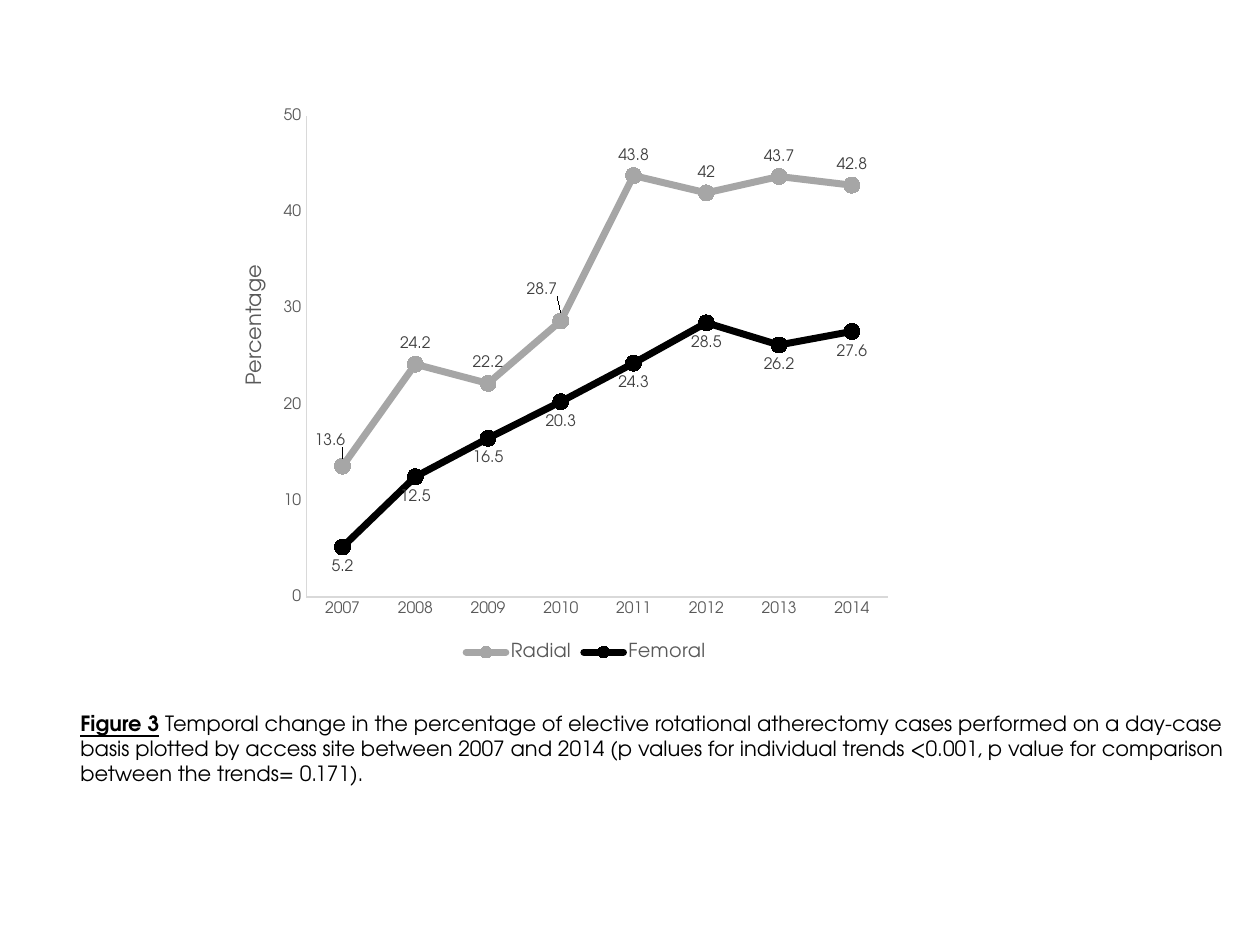
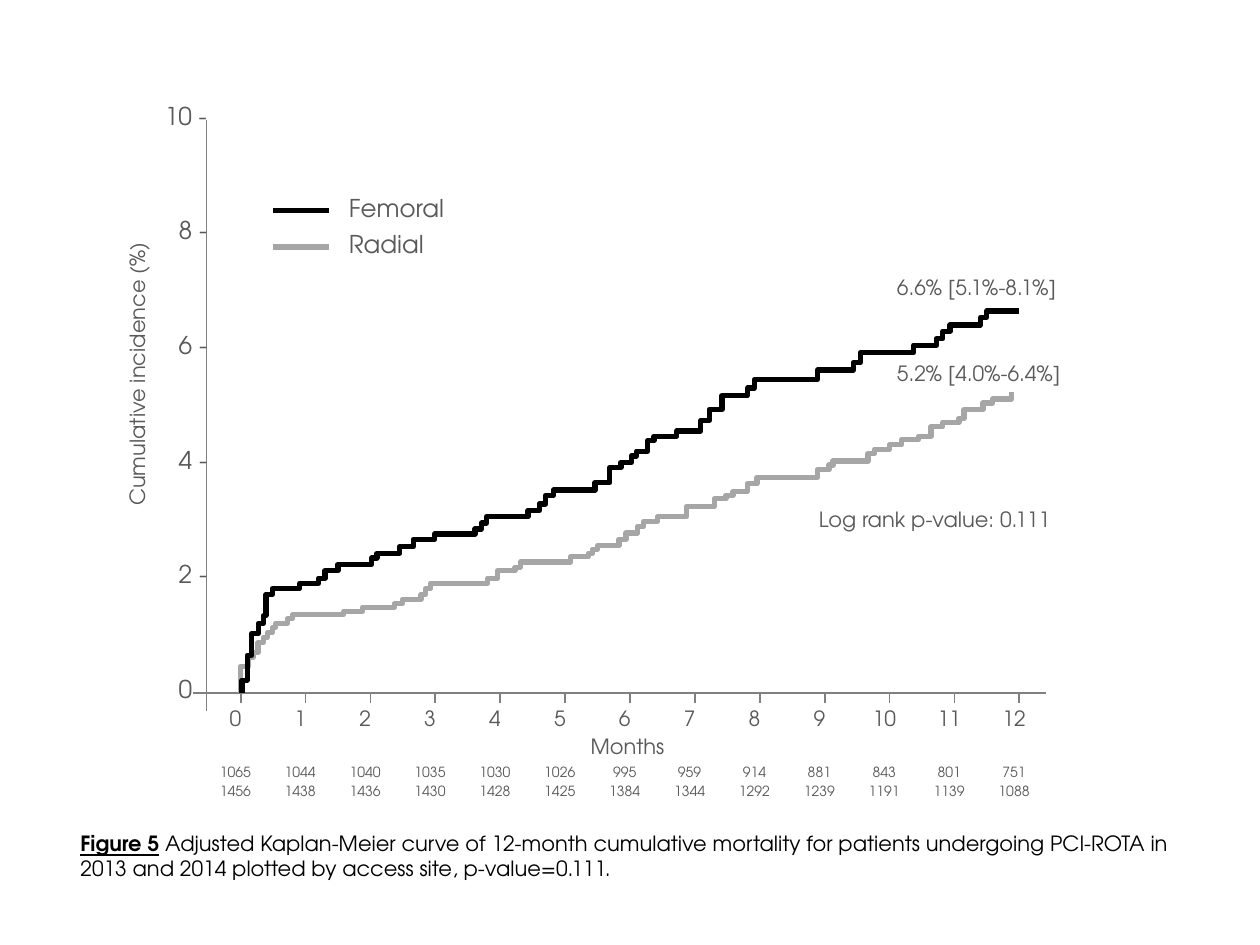
import pptx
import pptx.chart.data
import pptx.dml.color
import pptx.enum.chart
import pptx.enum.shapes
import pptx.enum.text
import pptx.oxml
import pptx.oxml.ns
import pptx.util

Inches = pptx.util.Inches
Pt = pptx.util.Pt
RGBColor = pptx.dml.color.RGBColor
ALIGN = pptx.enum.text.PP_ALIGN
LABEL = pptx.enum.chart.XL_LABEL_POSITION

FONT = "TeX Gyre Adventor"
BLACK = RGBColor(0x00, 0x00, 0x00)
LABEL_GRAY = RGBColor(0x40, 0x40, 0x40)
TEXT_GRAY = RGBColor(0x59, 0x59, 0x59)
AXIS_GRAY = RGBColor(0x80, 0x80, 0x80)
RADIAL_GRAY = RGBColor(0xA6, 0xA6, 0xA6)
CHART_AXIS_GRAY = RGBColor(0xD9, 0xD9, 0xD9)

# Figure 3: percentage of day cases by year
YEARS = [str(year) for year in range(2007, 2015)]
DAY_CASES = [
    ("Radial", RADIAL_GRAY, LABEL.ABOVE, (13.6, 24.2, 22.2, 28.7, 43.8, 42, 43.7, 42.8)),
    ("Femoral", BLACK, LABEL.BELOW, (5.2, 12.5, 16.5, 20.3, 24.3, 28.5, 26.2, 27.6)),
]
# point: shift of its label, as a share of the chart's width and height
MOVED_RADIAL_LABELS = {0: (-0.02, -0.01), 3: (-0.03, -0.02)}
CHART_WIDTH, CHART_HEIGHT = 5, 4.51
PLOT_LEFT, PLOT_TOP, PLOT_WIDTH, PLOT_HEIGHT = 0.28, 0.14, 4.62, 3.82

CAPTION_3 = ("Figure 3", "Temporal change in the percentage of elective rotational atherectomy cases "
             "performed on a day-case basis plotted by access site between 2007 and 2014 (p values for "
             "individual trends <0.001, p value for comparison between the trends= 0.171).")
CAPTION_5 = ("Figure 5", "Adjusted Kaplan-Meier curve of 12-month cumulative mortality for patients "
             "undergoing PCI-ROTA in 2013 and 2014 plotted by access site, p-value=0.111.")

# Figure 5: scales, in inches
LAST_MONTH = 12
ZERO_X, LAST_X = 1.91, 8.09
ZERO_Y = 5.5
PERCENT_HEIGHT = 0.46
MONTH_WIDTH = (LAST_X - ZERO_X) / LAST_MONTH
TICK_LENGTH = 0.08

# Figure 5: patients at risk at each month
FEMORAL_AT_RISK = (1065, 1044, 1040, 1035, 1030, 1026, 995, 959, 914, 881, 843, 801, 751)
RADIAL_AT_RISK = (1456, 1438, 1436, 1430, 1428, 1425, 1384, 1344, 1292, 1239, 1191, 1139, 1088)
# values, top, text size
MONTH_ROWS = [(range(LAST_MONTH + 1), 5.55, 12), (FEMORAL_AT_RISK, 6.01, 8), (RADIAL_AT_RISK, 6.16, 8)]

# Figure 5: steps of each curve as (month, cumulative incidence in %)
RADIAL_STEPS = [
    (0, 0.46), (0.12, 0.61), (0.19, 0.7), (0.27, 0.87), (0.35, 0.96), (0.41, 1.04), (0.49, 1.13),
    (0.54, 1.2), (0.72, 1.28), (0.8, 1.35), (1.59, 1.41), (1.88, 1.48), (2.37, 1.54), (2.49, 1.61),
    (2.78, 1.7), (2.85, 1.8), (2.93, 1.89), (3.81, 1.98), (3.96, 2.11), (4.23, 2.17), (4.31, 2.26),
    (5.09, 2.35), (5.36, 2.41), (5.42, 2.48), (5.5, 2.54), (5.83, 2.65), (5.94, 2.76), (6.12, 2.87),
    (6.21, 2.96), (6.43, 3.04), (6.87, 3.22), (7.3, 3.35), (7.48, 3.41), (7.59, 3.48), (7.81, 3.61),
    (7.96, 3.72), (8.89, 3.85), (9.07, 3.93), (9.13, 4), (9.67, 4.13), (9.77, 4.2), (10, 4.28),
    (10.19, 4.37), (10.45, 4.43), (10.64, 4.59), (10.82, 4.67), (11.07, 4.74), (11.15, 4.89),
    (11.44, 5), (11.59, 5.07), (11.88, 5.2),
]
FEMORAL_STEPS = [
    (0.02, 0.22), (0.1, 0.65), (0.17, 1.02), (0.27, 1.2), (0.35, 1.33), (0.39, 1.7), (0.49, 1.8),
    (0.91, 1.89), (1.2, 1.98), (1.3, 2.11), (1.5, 2.22), (2.02, 2.33), (2.1, 2.41), (2.45, 2.52),
    (2.66, 2.65), (2.99, 2.74), (3.61, 2.83), (3.71, 2.93), (3.79, 3.04), (4.43, 3.15), (4.6, 3.26),
    (4.7, 3.41), (4.82, 3.5), (5.46, 3.63), (5.69, 3.89), (5.86, 3.98), (6.02, 4.09), (6.1, 4.17),
    (6.27, 4.35), (6.37, 4.43), (6.72, 4.52), (7.09, 4.7), (7.22, 4.89), (7.42, 5.13), (7.81, 5.26),
    (7.92, 5.41), (8.89, 5.57), (9.44, 5.7), (9.55, 5.87), (10.37, 6), (10.72, 6.11), (10.82, 6.24),
    (10.93, 6.35), (11.4, 6.48), (11.5, 6.59),
]
# steps, month where the curve ends, colour
CURVES = [(RADIAL_STEPS, 11.88, RADIAL_GRAY), (FEMORAL_STEPS, 12, BLACK)]
NOTES = [("6.6% [5.1%-8.1%]", 7.02, 2.13, 1.99), ("5.2% [4.0%-6.4%]", 7.02, 2.81, 1.99),
         ("Log rank p-value: 0.111", 6.4, 3.97, 2.36)]
# name, colour, height of its line
KEY = [("Femoral", BLACK, 1.67), ("Radial", RADIAL_GRAY, 1.96)]


def month_x(month):
    return ZERO_X + month * MONTH_WIDTH


def incidence_y(percent):
    return ZERO_Y - percent * PERCENT_HEIGHT


def make_xml(prefix, tag, content=""):
    return pptx.oxml.parse_xml(
        f"<{prefix}:{tag} {pptx.oxml.ns.nsdecls(prefix)}>{content}</{prefix}:{tag}>")


def style_font(font, size, color):
    font.name = FONT
    font.size = Pt(size)
    font.color.rgb = color


def style_line(line, color, weight):
    line.color.rgb = color
    line.width = Pt(weight)


def add_text(page, text, left, top, width, height=0.3, size=12, align=ALIGN.LEFT, rotation=0):
    box = page.shapes.add_textbox(Inches(left), Inches(top), Inches(width), Inches(height))
    box.rotation = rotation
    box.text_frame.word_wrap = True
    box.text_frame.auto_size = pptx.enum.text.MSO_AUTO_SIZE.SHAPE_TO_FIT_TEXT
    para = box.text_frame.paragraphs[0]
    para.text = text
    para.alignment = align
    for span in para.runs:
        style_font(span.font, size, TEXT_GRAY)
    return para


def add_caption(page, caption, top, width, height):
    number, wording = caption
    para = add_text(page, number, 0.54, top, width, height)
    para.add_run().text = " "
    para.add_run().text = wording
    for span in para.runs:
        style_font(span.font, 12, BLACK)
    number_span = para.runs[0]
    number_span.font.bold = True
    number_span.font.underline = True


def add_line(page, x1, y1, x2, y2, color=AXIS_GRAY, weight=1):
    line = page.shapes.add_connector(pptx.enum.shapes.MSO_CONNECTOR.STRAIGHT,
                                     Inches(x1), Inches(y1), Inches(x2), Inches(y2))
    style_line(line.line, color, weight)
    line.element.spPr.append(make_xml("a", "effectLst"))


def add_month_row(page, values, top, size):
    """Write one line of text with a centred tab stop under each month."""
    left, inset, nudge = 1.4, 0.1, -0.04
    text = "".join(f"\t{value}" for value in values)
    para = add_text(page, text, left, top, 7.2, size=size)
    stops = "".join(
        f'<a:tab pos="{Inches(month_x(month) + nudge - left - inset)}" algn="ctr"/>'
        for month in range(len(values)))
    para._p.get_or_add_pPr().append(make_xml("a", "tabLst", stops))


def add_step_curve(page, steps, end_month, color):
    """Run across to each step's month at the old level, then up to its new one."""
    corners = [(steps[0][0], 0)]
    for month, percent in steps:
        level = corners[-1][1]
        corners += [(month, level), (month, percent)]
    corners.append((end_month, corners[-1][1]))

    points = [(Inches(month_x(month)), Inches(incidence_y(percent))) for month, percent in corners]
    builder = page.shapes.build_freeform(*points[0])
    builder.add_line_segments(points[1:], close=False)
    curve = builder.convert_to_shape()
    curve.shadow.inherit = False
    curve.fill.background()
    style_line(curve.line, color, 3)


def manual_layout(**settings):
    values = "".join(f'<c:{name} val="{value}"/>' for name, value in settings.items())
    return make_xml("c", "layout", f"<c:manualLayout>{values}</c:manualLayout>")


def style_axis(axis):
    axis.has_major_gridlines = False
    axis.major_tick_mark = axis.minor_tick_mark = pptx.enum.chart.XL_TICK_MARK.NONE
    style_font(axis.tick_labels.font, 9, TEXT_GRAY)
    style_line(axis.format.line, CHART_AXIS_GRAY, 0.75)


def style_series(series, color, position):
    series.smooth = False
    style_line(series.format.line, color, 4)
    marker = series.marker
    marker.style = pptx.enum.chart.XL_MARKER_STYLE.CIRCLE
    marker.size = 9
    marker.format.fill.solid()
    marker.format.fill.fore_color.rgb = color
    marker.format.line.color.rgb = color
    labels = series.data_labels
    labels.show_value = True
    labels.position = position
    style_font(labels.font, 9, LABEL_GRAY)


def move_labels(chart, series, shifts):
    for point in shifts:
        label = series.points[point].data_label
        label.position = LABEL.ABOVE
        style_font(label.font, 9, LABEL_GRAY)
    for label, (x, y) in zip(chart.element.xpath(".//c:dLbl"), shifts.values()):
        label.insert(1, manual_layout(x=x, y=y))
    hide_leader_lines = (
        '<c:ext uri="{CE6537A1-D6FC-4f65-9D91-7224C49458BB}"'
        ' xmlns:c15="http://schemas.microsoft.com/office/drawing/2012/chart">'
        '<c15:showLeaderLines val="0"/></c:ext>')
    for labels in chart.element.xpath(".//c:ser/c:dLbls"):
        labels.append(make_xml("c", "extLst", hide_leader_lines))


def place_plot(chart):
    plot_area = chart.element.xpath(".//c:plotArea")[0]
    for layout in plot_area.xpath("./c:layout"):
        plot_area.remove(layout)
    plot_area.insert(0, manual_layout(
        layoutTarget="inner", xMode="edge", yMode="edge",
        x=PLOT_LEFT / CHART_WIDTH, y=PLOT_TOP / CHART_HEIGHT,
        w=PLOT_WIDTH / CHART_WIDTH, h=PLOT_HEIGHT / CHART_HEIGHT))


def add_day_case_chart(page):
    data = pptx.chart.data.CategoryChartData()
    data.categories = YEARS
    for name, _, _, values in DAY_CASES:
        data.add_series(name, values)
    chart = page.shapes.add_chart(
        pptx.enum.chart.XL_CHART_TYPE.LINE_MARKERS, Inches(2.15), Inches(0.78),
        Inches(CHART_WIDTH), Inches(CHART_HEIGHT), data).chart
    style_font(chart.font, 10, BLACK)
    chart.has_title = False
    chart.has_legend = True
    chart.legend.position = pptx.enum.chart.XL_LEGEND_POSITION.BOTTOM
    chart.legend.include_in_layout = False
    style_font(chart.legend.font, 11, TEXT_GRAY)

    style_axis(chart.category_axis)
    style_axis(chart.value_axis)
    chart.value_axis.minimum_scale = 0
    chart.value_axis.maximum_scale = 50
    chart.value_axis.major_unit = 10

    plot = chart.plots[0]
    plot.vary_by_categories = False
    for series, (_, color, position, _) in zip(plot.series, DAY_CASES):
        style_series(series, color, position)
    for outline in chart.element.xpath(".//c:ser/c:spPr/a:ln"):
        outline.set("cap", "rnd")
    move_labels(chart, plot.series[0], MOVED_RADIAL_LABELS)
    place_plot(chart)


def add_mortality_axes(page):
    axis_x = 1.64
    add_line(page, axis_x, 0.95, axis_x, 5.64)
    add_line(page, 8.3, ZERO_Y, 1.53, ZERO_Y)
    for percent in range(10, -1, -2):
        text = f"{percent} -" if percent else "0"
        left = 1.21 if percent == 10 else 1.32
        add_text(page, text, left, 5.3 - percent / 2 * 0.91, 0.64, 0.34, 14)
    add_text(page, "Cumulative incidence (%)", -0.65, 2.82, 3.48, align=ALIGN.CENTER, rotation=270)
    for month in range(LAST_MONTH + 1):
        add_line(page, month_x(month), ZERO_Y, month_x(month), ZERO_Y + TICK_LENGTH)
    for values, top, size in MONTH_ROWS:
        add_month_row(page, values, top, size)
    add_text(page, "Months", 3.24, 5.77, 3.48, align=ALIGN.CENTER)


def build_day_case_slide(page):
    add_day_case_chart(page)
    add_caption(page, CAPTION_3, 5.59, 9.46, 0.71)
    add_text(page, "Percentage", 1.38, 2.43, 1.26, align=ALIGN.CENTER, rotation=270)


def build_mortality_slide(page):
    add_mortality_axes(page)
    for steps, end_month, color in CURVES:
        add_step_curve(page, steps, end_month, color)
    for text, left, top, width in NOTES:
        add_text(page, text, left, top, width)
    for name, color, line_y in KEY:
        add_line(page, 2.17, line_y, 2.61, line_y, color, 3)
        add_text(page, name, 2.67, line_y - 0.19, 1.7, 0.34, 14)
    add_caption(page, CAPTION_5, 6.54, 8.9, 0.5)


def main():
    deck = pptx.Presentation()
    deck.slide_width = Inches(10)
    deck.slide_height = Inches(7.5)
    blank = deck.slide_layouts[6]
    for build in (build_day_case_slide, build_mortality_slide):
        build(deck.slides.add_slide(blank))
    deck.save("out.pptx")


if __name__ == "__main__":
    main()
